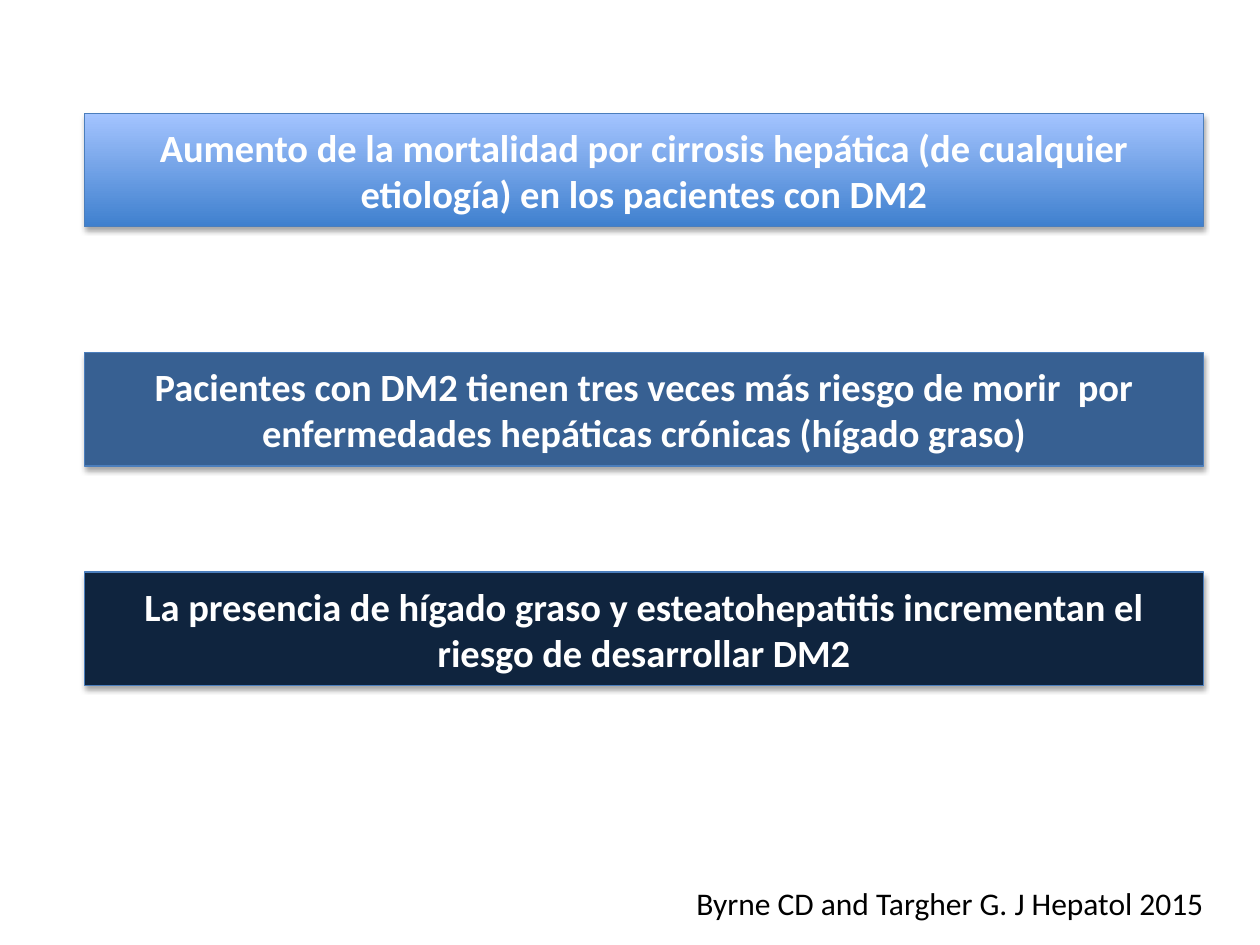
from lxml.etree import SubElement
from pptx import Presentation
from pptx.dml.color import RGBColor
from pptx.enum.shapes import MSO_SHAPE as Shape
from pptx.enum.text import MSO_ANCHOR as Anchor, PP_ALIGN as Align
from pptx.oxml.ns import qn
from pptx.util import Inches, Pt

COLORS = {
    "light": "A4C4FF",
    "medium": "3F80CE",
    "steel": "376092",
    "navy": "0F243E",
    "outline": "4B7EBC",
    "white": "FFFFFF",
    "black": "000000",
}


def rgb(name):
    return RGBColor.from_string(COLORS[name])


def write(frame, text, *, size, color, bold=False, font="Calibri"):
    frame.word_wrap = True
    frame.vertical_anchor = Anchor.MIDDLE
    paragraph = frame.paragraphs[0]
    paragraph.alignment = Align.CENTER
    run = paragraph.add_run()
    run.text = text
    run.font.name = font
    run.font.size = Pt(size)
    run.font.bold = bold
    run.font.color.rgb = rgb(color)


class SlideBuilder:
    """Holds the banner style and the current slide."""

    left, width, height = Inches(0.67), Inches(8.88), Inches(0.9)

    def __init__(self, slide):
        self.slide = slide

    def banner(self, text, top, *fills):
        banner = self.slide.shapes.add_shape(
            Shape.RECTANGLE, self.left, Inches(top), self.width, self.height)
        if len(fills) > 1:
            banner.fill.gradient()
            banner.fill.gradient_angle = 90
            for stop, color in zip(banner.fill.gradient_stops, fills):
                stop.color.rgb = rgb(color)
        else:
            banner.fill.solid()
            banner.fill.fore_color.rgb = rgb(fills[0])
        banner.line.color.rgb = rgb("outline")
        banner.line.width = Pt(0.75)
        self.drop_shadow(banner)
        write(banner.text_frame, text, size=22, color="white", bold=True)

    def drop_shadow(self, banner):
        banner.shadow.inherit = False
        effects = banner.element.spPr.find(qn("a:effectLst"))
        shadow = SubElement(effects, qn("a:outerShdw"), blurRad=str(Pt(3.1)),
                            dist=str(Pt(1.8)), dir="5400000", rotWithShape="0")
        tint = SubElement(shadow, qn("a:srgbClr"), val=COLORS["black"])
        SubElement(tint, qn("a:alpha"), val="35000")

    def citation(self, text, left, top, width, height):
        citation = self.slide.shapes.add_textbox(
            Inches(left), Inches(top), Inches(width), Inches(height))
        write(citation.text_frame, text, size=18, color="black")


def main():
    deck = Presentation()
    deck.slide_width, deck.slide_height = Inches(10), Inches(7.5)
    builder = SlideBuilder(deck.slides.add_slide(deck.slide_layouts[6]))
    builder.banner("Aumento de la mortalidad por cirrosis hepática (de cualquier "
                   "etiología) en los pacientes con DM2", 0.9, "medium", "light")
    builder.banner("Pacientes con DM2 tienen tres veces más riesgo de morir  por "
                   "enfermedades hepáticas crónicas (hígado graso)", 2.8, "steel")
    builder.citation("Byrne CD and Targher G. J Hepatol 2015", 5.32, 6.9, 4.44, 0.53)
    builder.banner("La presencia de hígado graso y esteatohepatitis incrementan el "
                   "riesgo de desarrollar DM2", 4.54, "navy")
    deck.save("out.pptx")


if __name__ == "__main__":
    main()
